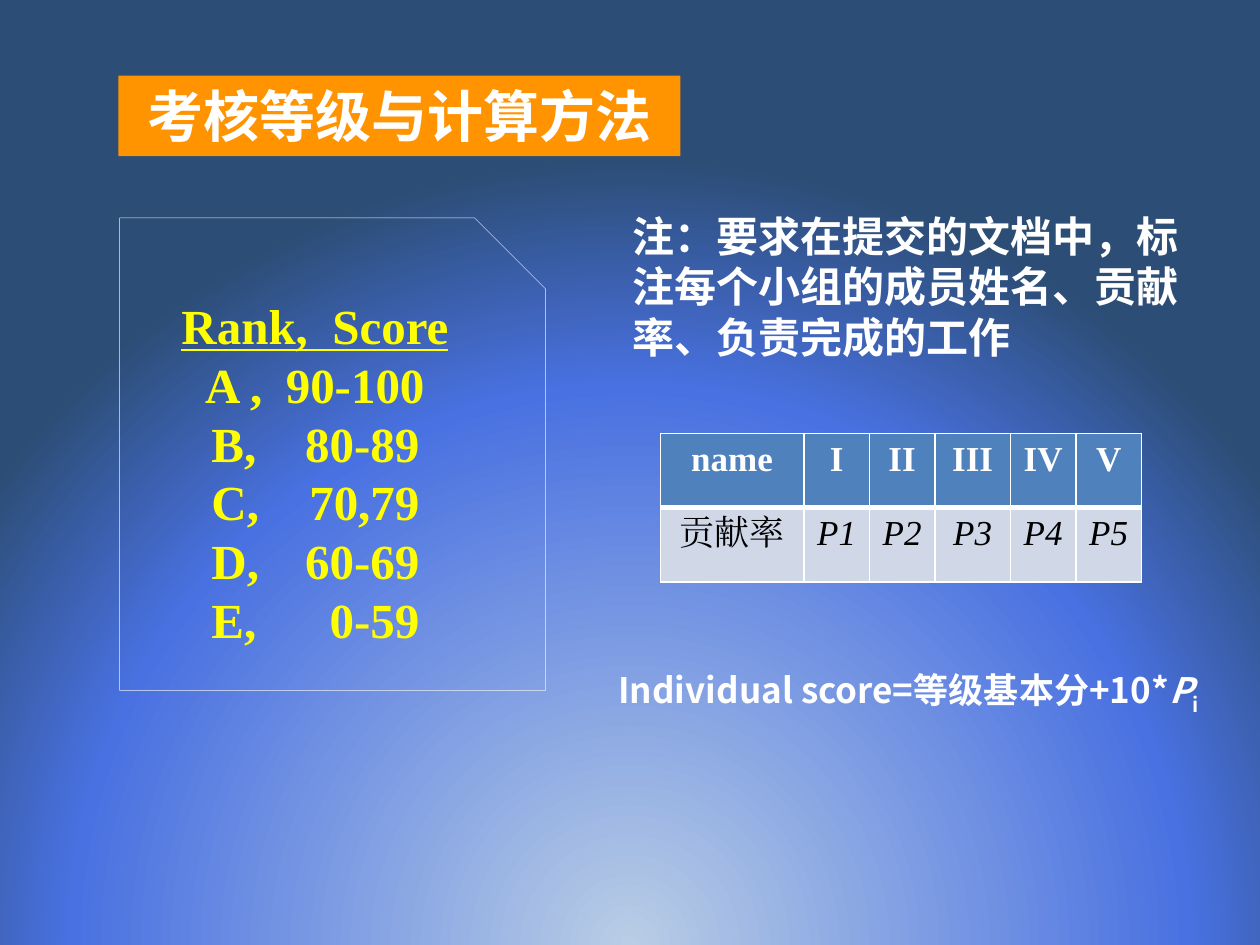
from lxml import etree
from pptx import Presentation
from pptx import oxml
from pptx.dml.color import RGBColor
from pptx.enum import shapes, text
from pptx.oxml import ns
from pptx.util import Inches, Pt

WHITE = RGBColor(0xFF, 0xFF, 0xFF)
BLACK = RGBColor(0, 0, 0)
YELLOW = RGBColor(0xFF, 0xFF, 0)
ORANGE = RGBColor(0xFF, 0x93, 0)
OUTLINE = RGBColor(0xF2, 0xF2, 0xF2)
HEADER_BLUE = RGBColor(0x4F, 0x81, 0xBD)
PALE_BLUE = RGBColor(0xD0, 0xD8, 0xE8)
GLOW = RGBColor(0xB9, 0xCD, 0xE5)
BLUE = RGBColor(0x49, 0x71, 0xE1)
NAVY = RGBColor(0x2C, 0x4D, 0x75)
SANS = "Noto Sans CJK SC"
SERIF = "Times New Roman"


def write(para, words, size, font, color=WHITE, bold=True, italic=False,
          underline=False, align=text.PP_ALIGN.LEFT):
    """Add one formatted run to a paragraph and return it."""
    para.alignment = align
    span = para.add_run()
    span.text = words
    span.font.size = Pt(size)
    span.font.name = font
    span.font.color.rgb = color
    span.font.bold = bold
    span.font.italic = italic
    span.font.underline = underline
    east_asian = etree.Element(ns.qn("a:ea"), typeface=font)
    span.font._element.find(ns.qn("a:latin")).addnext(east_asian)
    return span


def set_border(cell, side, width):
    line = oxml.parse_xml(
        f'<a:{side} {ns.nsdecls("a")} w="{Pt(width)}"><a:solidFill>'
        f'<a:srgbClr val="{WHITE}"/></a:solidFill></a:{side}>')
    properties = cell._tc.get_or_add_tcPr()
    fill = properties.find(ns.qn("a:solidFill"))
    fill.addprevious(line)


deck = Presentation()
deck.slide_width, deck.slide_height = Inches(10), Inches(7.5)
page = deck.slides.add_slide(deck.slide_layouts[6])
centered = text.PP_ALIGN.CENTER

# Background glow rising from the bottom edge
page.background.fill.gradient()
old_gradient = page.background._cSld.find(".//" + ns.qn("a:gradFill"))
stops = "".join(
    f'<a:gs pos="{position * 1000}"><a:srgbClr val="{color}"/></a:gs>'
    for position, color in ((0, GLOW), (71, BLUE), (100, NAVY)))
gradient = oxml.parse_xml(
    f'<a:gradFill {ns.nsdecls("a")} rotWithShape="1"><a:gsLst>{stops}</a:gsLst>'
    '<a:path path="circle"><a:fillToRect l="50000" t="130000" r="50000" b="-30000"/>'
    '</a:path></a:gradFill>')
old_gradient.getparent().replace(old_gradient, gradient)

# Title banner
banner = page.shapes.add_shape(shapes.MSO_SHAPE.RECTANGLE, Inches(0.94),
                               Inches(0.6), Inches(4.46), Inches(0.64))
banner.shadow.inherit = False
banner.fill.solid()
banner.fill.fore_color.rgb = ORANGE
banner.line.fill.background()
banner.text_frame.vertical_anchor = text.MSO_ANCHOR.TOP
write(banner.text_frame.paragraphs[0], "考核等级与计算方法", 32, SANS, align=centered)

# Rank card: each row has a left tab for the rank and a right tab for the score
card = page.shapes.add_shape(shapes.MSO_SHAPE.SNIP_1_RECTANGLE, Inches(0.95),
                             Inches(1.73), Inches(3.38), Inches(3.75))
card.shadow.inherit = False
card.fill.background()
card.line.color.rgb = OUTLINE
card.line.width = Pt(0.25)
card.text_frame.vertical_anchor = text.MSO_ANCHOR.MIDDLE
write(card.text_frame.paragraphs[0], "Rank,  Score", 28, SERIF, YELLOW,
      underline=True, align=centered)
ranks = [("A ,", "90-100", 0.58, 2.32), ("B,", "80-89", 0.63, 2.28),
         ("C,", "70,79", 0.63, 2.28), ("D,", "60-69", 0.63, 2.28),
         ("E,", "0-59", 0.63, 2.28)]
for rank, score, rank_stop, score_stop in ranks:
    para = card.text_frame.add_paragraph()
    write(para, f"\t{rank}\t{score}", 28, SERIF, YELLOW)
    tabs = etree.SubElement(para._p.get_or_add_pPr(), ns.qn("a:tabLst"))
    for stop, side in ((rank_stop, "l"), (score_stop, "r")):
        etree.SubElement(tabs, ns.qn("a:tab"), pos=str(Inches(stop)), algn=side)

# Contribution table
rows = [["name", "I", "II", "III", "IV", "V"],
        ["贡献率", "P1", "P2", "P3", "P4", "P5"]]
table = page.shapes.add_table(2, 6, Inches(5.24), Inches(3.44),
                              Inches(3.82), Inches(1.18)).table
for column, width in zip(table.columns, (1.14, 0.52, 0.52, 0.6, 0.52, 0.52)):
    column.width = Inches(width)
for r, row in enumerate(rows):
    header = r == 0
    table.rows[r].height = Inches(0.59)
    for c, words in enumerate(row):
        cell = table.cell(r, c)
        cell.margin_left = cell.margin_right = Inches(0.07)
        cell.margin_top = cell.margin_bottom = Inches(0.05)
        cell.fill.solid()
        cell.fill.fore_color.rgb = HEADER_BLUE if header else PALE_BLUE
        write(cell.text_frame.paragraphs[0], words, 20, SERIF,
              WHITE if header else BLACK, bold=header,
              italic=not header and c > 0, align=centered)
        top, bottom = (1, 3) if header else (3, 1)
        for side, width in (("lnL", 1), ("lnR", 1), ("lnT", top), ("lnB", bottom)):
            set_border(cell, side, width)

# Score formula
formula = page.shapes.add_textbox(Inches(4.81), Inches(5.26), Inches(4.83), Inches(0.44))
formula.text_frame.word_wrap = True
para = formula.text_frame.paragraphs[0]
write(para, "Individual score=等级基本分+10*", 20, SANS)
write(para, "P", 20, SANS, italic=True)
index = write(para, "i", 20, SANS)
index.font._element.set("baseline", "-25000")

# Submission note
note = page.shapes.add_textbox(Inches(4.92), Inches(1.62), Inches(4.62), Inches(1.31))
note.text_frame.word_wrap = True
write(note.text_frame.paragraphs[0],
      "注：要求在提交的文档中，标注每个小组的成员姓名、贡献率、负责完成的工作", 24, "Arial")

deck.save("out.pptx")
